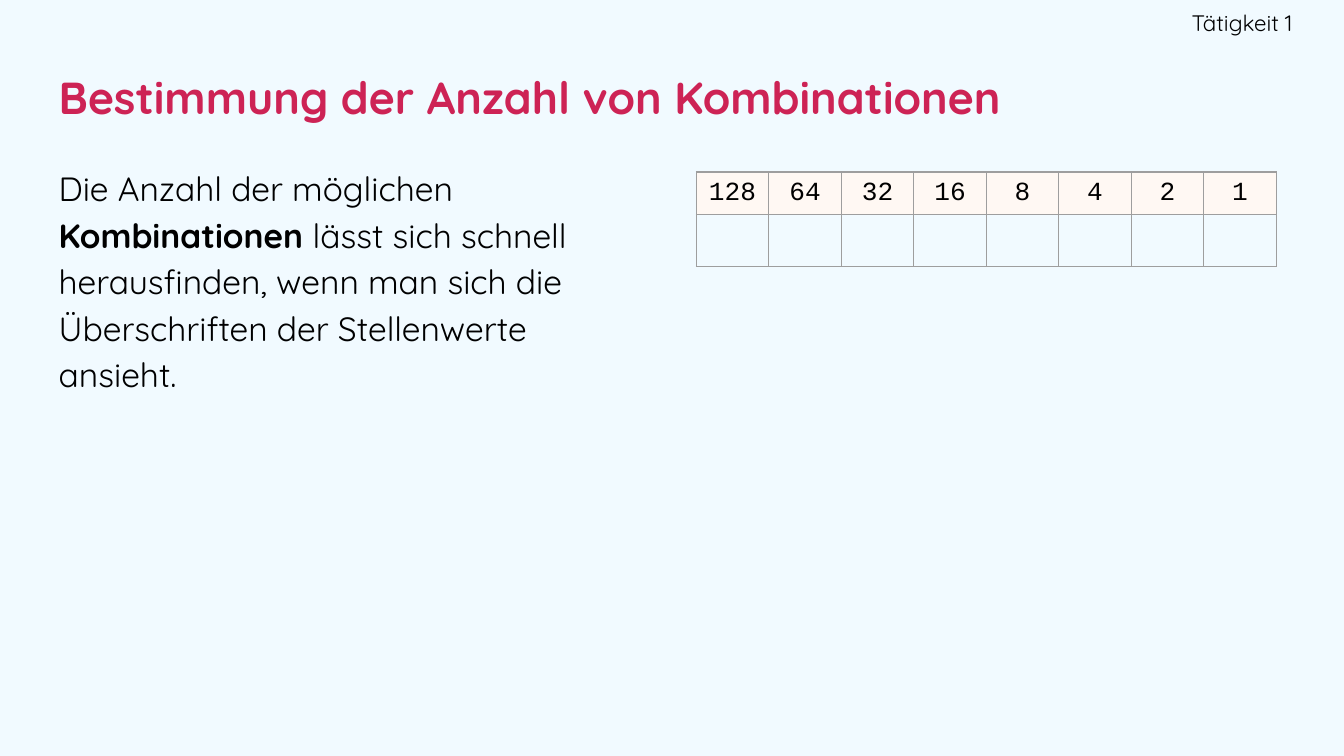
"""Build the slide on counting combinations from binary place values."""
import pptx
import pptx.dml.color
import pptx.enum.text
import pptx.oxml
import pptx.oxml.ns
import pptx.util
from pptx.util import Cm

HEADING = "Bestimmung der Anzahl von Kombinationen"
ACTIVITY = "Tätigkeit 1"
EXPLANATION = [
    ("Die Anzahl der möglichen ", False),
    ("Kombinationen ", True),
    ("lässt sich schnell herausfinden, wenn man sich die "
     "Überschriften der Stellenwerte ansieht.", False),
]
PLACE_VALUES = [2 ** power for power in reversed(range(8))]
ROWS = [[str(value) for value in PLACE_VALUES], [""] * len(PLACE_VALUES)]
ROW_HEIGHTS = [Cm(0.81), Cm(0.98)]
COLUMN_WIDTH = Cm(1.37)

BACKGROUND = pptx.dml.color.RGBColor(0xF1, 0xFA, 0xFF)
CRIMSON = pptx.dml.color.RGBColor(0xCD, 0x23, 0x55)
BLACK = pptx.dml.color.RGBColor(0x00, 0x00, 0x00)
CREAM = pptx.dml.color.RGBColor(0xFF, 0xF8, 0xF3)
GREY = pptx.dml.color.RGBColor(0x9E, 0x9E, 0x9E)

ALIGN = pptx.enum.text.PP_ALIGN
ANCHOR = pptx.enum.text.MSO_ANCHOR


def style_font(font, name, size, color):
    font.name = name
    font.size = pptx.util.Pt(size)
    font.color.rgb = color


def set_frame(shape, box, anchor, right_inset=Cm(0.25)):
    shape.left, shape.top, shape.width, shape.height = box
    frame = shape.text_frame
    frame.word_wrap = True
    frame.auto_size = pptx.enum.text.MSO_AUTO_SIZE.NONE
    frame.vertical_anchor = anchor
    frame.margin_left = frame.margin_top = frame.margin_bottom = Cm(0.25)
    frame.margin_right = right_inset
    return frame.paragraphs[0]


def add_borders(cell):
    properties = cell._tc.get_or_add_tcPr()
    for side in ("lnL", "lnR", "lnT", "lnB"):
        properties.append(pptx.oxml.parse_xml(
            f'<a:{side} {pptx.oxml.ns.nsdecls("a")} w="{pptx.util.Pt(0.75)}">'
            f'<a:solidFill><a:srgbClr val="{GREY}"/></a:solidFill></a:{side}>'))


def add_place_value_table(slide):
    table = slide.shapes.add_table(
        len(ROWS), len(PLACE_VALUES), Cm(13.16), Cm(3.25),
        COLUMN_WIDTH * len(PLACE_VALUES), sum(ROW_HEIGHTS)).table
    table.first_row = table.horz_banding = False
    for column in table.columns:
        column.width = COLUMN_WIDTH
    for row_index, (values, height) in enumerate(zip(ROWS, ROW_HEIGHTS)):
        table.rows[row_index].height = height
        for column_index, value in enumerate(values):
            cell = table.cell(row_index, column_index)
            cell.margin_left = cell.margin_right = Cm(0.12)
            cell.margin_top = cell.margin_bottom = Cm(0.12)
            add_borders(cell)
            if value:
                cell.fill.solid()
                cell.fill.fore_color.rgb = CREAM
            else:
                cell.fill.background()
            cell.text = value
            digits = cell.text_frame.paragraphs[0]
            digits.alignment = ALIGN.CENTER
            style_font(digits.font, "Courier New", 14, BLACK)


def main():
    deck = pptx.Presentation()
    deck.slide_width, deck.slide_height = Cm(25.4), Cm(14.29)
    slide = deck.slides.add_slide(deck.slide_layouts[5])
    slide.background.fill.solid()
    slide.background.fill.fore_color.rgb = BACKGROUND

    heading = set_frame(slide.shapes.title,
                        (Cm(0.86), Cm(0.86), Cm(23.67), Cm(1.93)), ANCHOR.MIDDLE)
    heading.text = HEADING
    heading.alignment = ALIGN.LEFT
    heading.font.bold = True
    style_font(heading.font, "Quicksand", 24, CRIMSON)

    explanation_box = (Cm(0.86), Cm(2.82), Cm(11.38), Cm(11.38))
    explanation = set_frame(slide.shapes.add_textbox(*explanation_box),
                            explanation_box, ANCHOR.TOP)
    explanation.line_spacing = 1.15
    explanation.space_after = pptx.util.Pt(16)
    style_font(explanation.font, "Quicksand", 18, BLACK)
    for words, bold in EXPLANATION:
        run = explanation.add_run()
        run.text = words
        run.font.bold = bold

    activity_box = (Cm(19), Cm(0), Cm(5.43), Cm(0.86))
    activity = set_frame(slide.shapes.add_textbox(*activity_box),
                         activity_box, ANCHOR.MIDDLE, right_inset=Cm(0))
    activity.text = ACTIVITY
    activity.alignment = ALIGN.RIGHT
    style_font(activity.font, "Quicksand", 12, BLACK)

    add_place_value_table(slide)
    deck.save("out.pptx")


if __name__ == "__main__":
    main()
